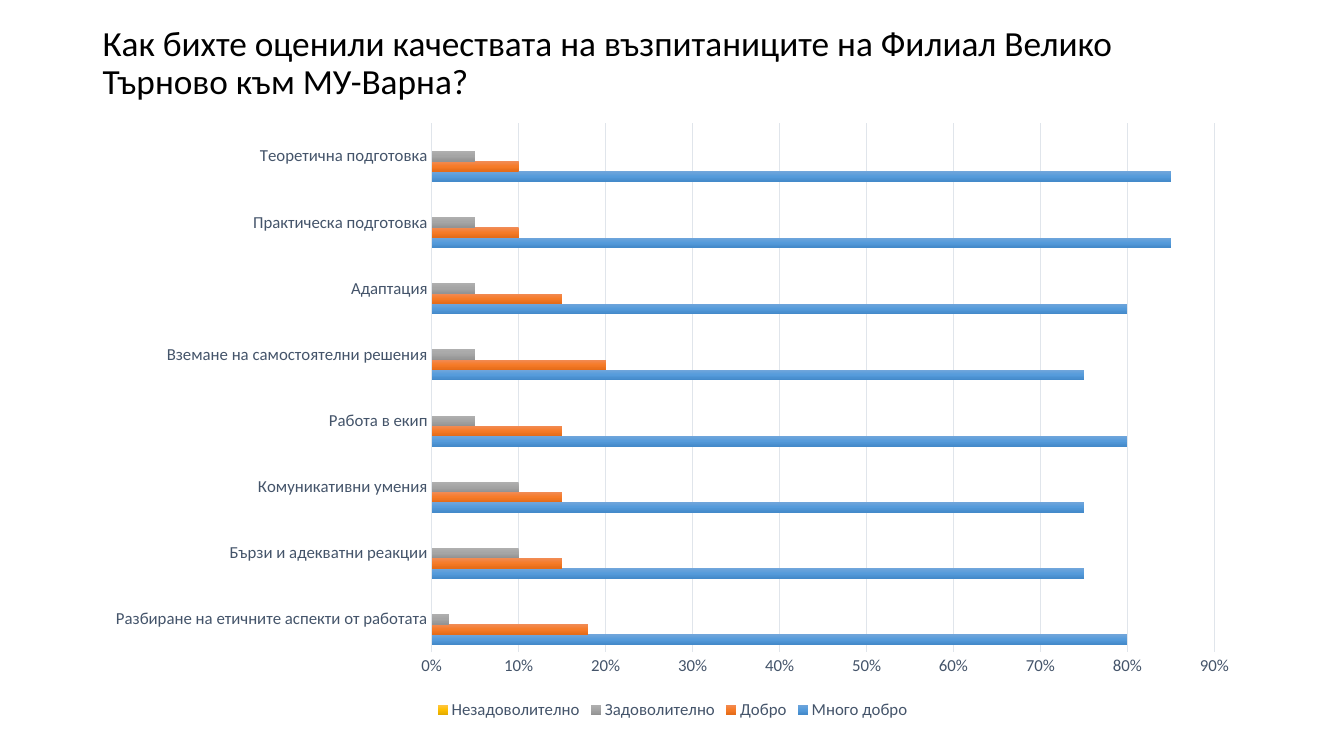
from dataclasses import dataclass

from lxml import etree
from pptx import Presentation
from pptx.chart.chart import Chart
from pptx.chart.data import CategoryChartData
from pptx.dml.color import RGBColor
from pptx.enum.chart import XL_CHART_TYPE as ChartType
from pptx.enum.chart import XL_LEGEND_POSITION as LegendPos
from pptx.enum.chart import XL_TICK_MARK as Tick
from pptx.enum.text import MSO_ANCHOR as Anchor
from pptx.oxml import parse_xml
from pptx.oxml.ns import nsdecls, qn
from pptx.util import Inches, Pt

FONT = "Calibri"
BLACK = RGBColor(0x00, 0x00, 0x00)
SLATE = RGBColor(0x44, 0x54, 0x6A)
PALE = RGBColor(0xE0, 0xE5, 0xEB)

TITLE = "Как бихте оценили качествата на възпитаниците на Филиал Велико Търново към МУ-Варна?"
QUALITIES = [
    "Разбиране на етичните аспекти от работата",
    "Бързи и адекватни реакции",
    "Комуникативни умения",
    "Работа в екип",
    "Вземане на самостоятелни решения",
    "Адаптация",
    "Практическа подготовка",
    "Теоретична подготовка",
]
NO_ANSWERS = (None,) * len(QUALITIES)


@dataclass
class Rating:
    name: str
    shares: tuple[float | None, ...]
    top: RGBColor
    middle: RGBColor
    bottom: RGBColor


# The last, unnamed rating only reserves room in each group of bars
RATINGS = [
    Rating("Много добро", (0.8, 0.75, 0.75, 0.8, 0.75, 0.8, 0.85, 0.85),
           RGBColor(0x71, 0xA6, 0xDB), RGBColor(0x55, 0x9B, 0xDB), RGBColor(0x44, 0x8A, 0xCA)),
    Rating("Добро", (0.18, 0.15, 0.15, 0.15, 0.2, 0.15, 0.1, 0.1),
           RGBColor(0xF1, 0x8C, 0x57), RGBColor(0xF6, 0x7B, 0x28), RGBColor(0xE5, 0x6C, 0x19)),
    Rating("Задоволително", (0.02, 0.1, 0.1, 0.05, 0.05, 0.05, 0.05, 0.05),
           RGBColor(0xAF, 0xAF, 0xAF), RGBColor(0xA5, 0xA5, 0xA5), RGBColor(0x93, 0x93, 0x93)),
    Rating("Незадоволително", NO_ANSWERS,
           RGBColor(0xFF, 0xC6, 0x4B), RGBColor(0xFF, 0xC0, 0x00), RGBColor(0xE3, 0xAB, 0x00)),
    Rating("", NO_ANSWERS,
           RGBColor(0x61, 0x83, 0xCB), RGBColor(0x3E, 0x70, 0xCA), RGBColor(0x30, 0x62, 0xBB)),
]


def style_font(font, size: float, color: RGBColor) -> None:
    font.name = FONT
    font.size = Pt(size)
    font.color.rgb = color


def style_line(line) -> None:
    line.color.rgb = PALE
    line.width = Pt(0.75)


def add_title(slide) -> None:
    sp = slide.shapes.add_textbox(Inches(0.92), Inches(0.17), Inches(11.5), Inches(0.93))
    tf = sp.text_frame
    tf.word_wrap = True
    tf.vertical_anchor = Anchor.MIDDLE
    p = tf.paragraphs[0]
    p.text = TITLE
    p.line_spacing = 0.9
    style_font(p.runs[0].font, 25.2, BLACK)


def fill_gradient(series, rating: Rating) -> None:
    colors = (rating.top, rating.middle, rating.bottom)
    stops = "".join(
        f'<a:gs pos="{i * 50000}"><a:srgbClr val="{c}"/></a:gs>' for i, c in enumerate(colors)
    )
    grad = parse_xml(
        f'<a:gradFill {nsdecls("a")} rotWithShape="1"><a:gsLst>{stops}</a:gsLst>'
        '<a:lin ang="5400000" scaled="0"/></a:gradFill>'
    )
    series.format.line.fill.background()
    series.format.fill.background()
    sp_pr = series.format.fill._xPr
    sp_pr.replace(sp_pr.find(qn("a:noFill")), grad)


def style_axes(chart: Chart) -> None:
    for axis in (chart.category_axis, chart.value_axis):
        axis.major_tick_mark = axis.minor_tick_mark = Tick.NONE
        style_font(axis.tick_labels.font, 12, SLATE)
    style_line(chart.category_axis.format.line)
    values = chart.value_axis
    values.format.line.fill.background()
    values.has_major_gridlines = True
    style_line(values.major_gridlines.format.line)
    values.tick_labels.number_format = "0%"
    values.tick_labels.number_format_is_linked = False


def add_legend(chart: Chart) -> None:
    chart.has_legend = True
    legend = chart.legend
    legend.position = LegendPos.BOTTOM
    legend.include_in_layout = False
    style_font(legend.font, 12, SLATE)
    # Hide the entry of the unnamed rating; legend entries run in reverse order
    entry = etree.Element(qn("c:legendEntry"))
    etree.SubElement(entry, qn("c:idx")).set("val", "0")
    etree.SubElement(entry, qn("c:delete")).set("val", "1")
    legend._element.find(qn("c:legendPos")).addnext(entry)


def add_ratings_chart(slide) -> None:
    data = CategoryChartData(number_format="0%")
    data.categories = QUALITIES
    for rating in RATINGS:
        data.add_series(rating.name, rating.shares)
    chart = slide.shapes.add_chart(
        ChartType.BAR_CLUSTERED, Inches(0.92), Inches(1.1), Inches(11.5), Inches(6.08), data
    ).chart
    chart.has_title = False
    style_font(chart.font, 10, BLACK)
    plot = chart.plots[0]
    plot.gap_width = 150
    plot.overlap = 0
    plot.vary_by_categories = False
    for series, rating in zip(plot.series, RATINGS):
        fill_gradient(series, rating)
    style_axes(chart)
    add_legend(chart)


def main() -> None:
    prs = Presentation()
    prs.slide_width, prs.slide_height = Inches(13.33), Inches(7.5)
    slide = prs.slides.add_slide(prs.slide_layouts[6])
    add_title(slide)
    add_ratings_chart(slide)
    prs.save("out.pptx")


if __name__ == "__main__":
    main()
